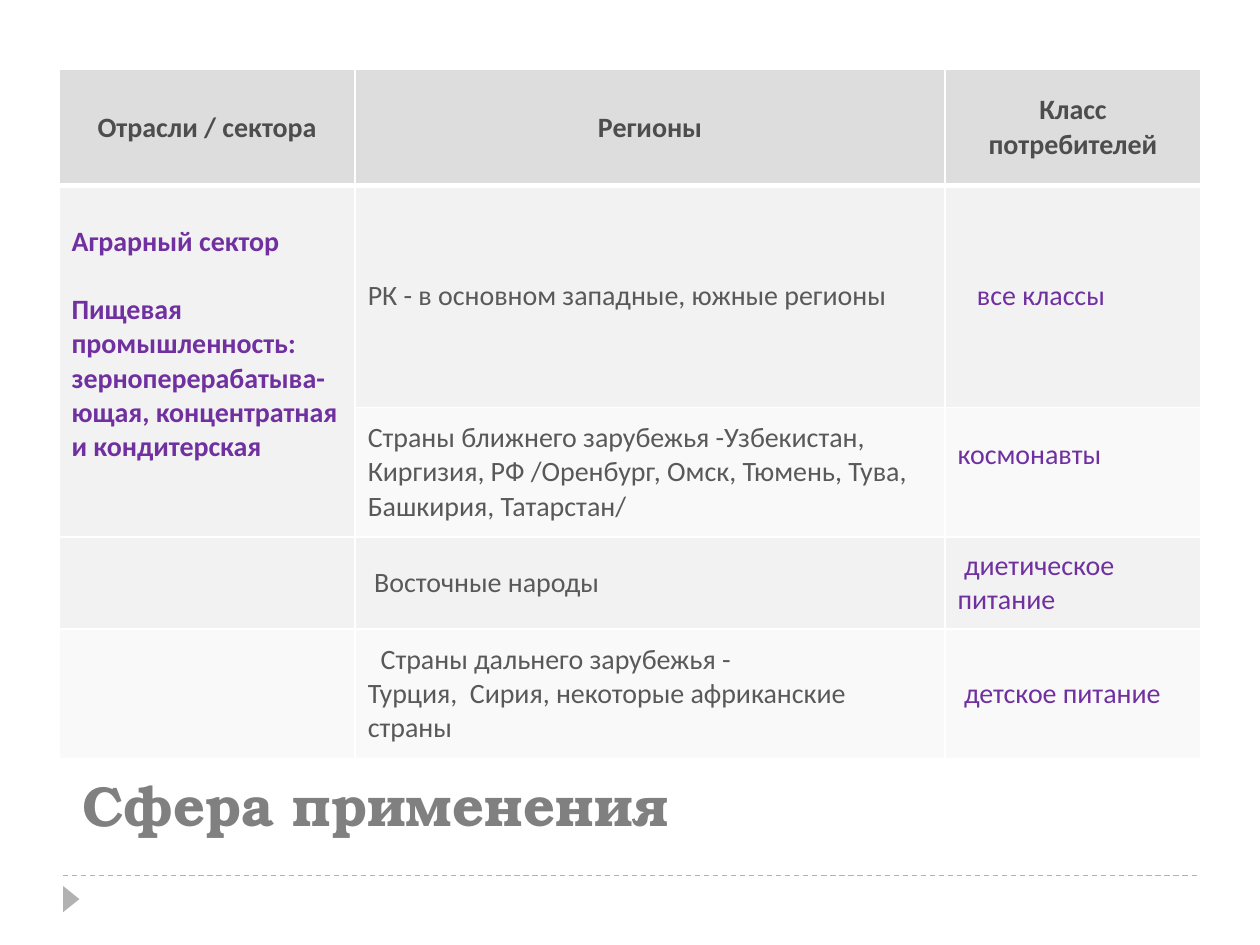
from pptx import Presentation
from pptx.dml.color import RGBColor
from pptx.enum import dml, shapes, text
from pptx.oxml import ns, xmlchemy
from pptx.util import Cm, Pt

COLORS = {
    "white": "FFFFFF", "rule": "B2B2B2", "title": "808080",
    "header": "DDDDDD", "header_text": "4D4D4D",
    "odd": "F2F2F2", "even": "F9F9F9",
    "body": "595959", "accent": "7030A0",
}
COLUMNS = (5.97, 11.89, 5.16)
ROWS = (2.34, 4.47, 2.62, 1.85, 2.62)
HEADERS = ("Отрасли / сектора", "Регионы", "Класс потребителей")
SECTORS = ("Аграрный сектор",
           "Пищевая промышленность: зерноперерабатыва-ющая, "
           "концентратная и кондитерская")
REGIONS = (
    ("РК - в основном западные, южные регионы",),
    ("Страны ближнего зарубежья -Узбекистан, Киргизия, РФ /Оренбург, "
     "Омск, Тюмень, Тува, Башкирия, Татарстан/",),
    ("Восточные народы",),
    ("Страны дальнего зарубежья -",
     "Турция,  Сирия, некоторые африканские страны"),
)
REGION_INDENTS = (0, 0, 0.13, 0.26)
CLASSES = (("все классы",), ("космонавты",),
           ("диетическое", "питание"), ("детское питание",))
CLASS_INDENTS = (0.39, 0, 0.13, 0.13)
RAISED_MARGIN = 0.81  # bottom margin that lifts centred text by half a line


def color(name):
    return RGBColor.from_string(COLORS[name])


def add_border(cell, side, width):
    """Add one white border; called before the cell is filled."""
    line = xmlchemy.OxmlElement(f"a:{side}")
    line.set("w", str(Pt(width)))
    fill = xmlchemy.OxmlElement("a:solidFill")
    value = xmlchemy.OxmlElement("a:srgbClr")
    value.set("val", COLORS["white"])
    fill.append(value)
    line.append(fill)
    cell._tc.get_or_add_tcPr().append(line)


def style_cell(cell, fill, bottom=1, top=1):
    for side, width in (("lnL", 1), ("lnR", 1), ("lnT", top), ("lnB", bottom)):
        add_border(cell, side, width)
    cell.fill.solid()
    cell.fill.fore_color.rgb = color(fill)
    cell.vertical_anchor = text.MSO_ANCHOR.MIDDLE


def write_cell(cell, lines, ink, bold=False, align=text.PP_ALIGN.LEFT, indent=0):
    frame = cell.text_frame
    frame.text = "\n".join(lines)
    for para in frame.paragraphs:
        para.alignment = align
        para.font.name = "Calibri"
        para.font.size = Pt(16)
        para.font.bold = bold
        para.font.color.rgb = color(ink)
    if indent:
        frame.paragraphs[0]._p.get_or_add_pPr().set("indent", str(Cm(indent)))


def add_market_table(page, left, top):
    frame = page.shapes.add_table(len(ROWS), len(COLUMNS), Cm(left), Cm(top),
                                  Cm(sum(COLUMNS)), Cm(sum(ROWS)))
    table = frame.table
    for column, width in zip(table.columns, COLUMNS):
        column.width = Cm(width)
    for row, height in zip(table.rows, ROWS):
        row.height = Cm(height)

    # Header row
    for index, heading in enumerate(HEADERS):
        cell = table.cell(0, index)
        style_cell(cell, "header", bottom=3)
        write_cell(cell, [heading], "header_text", True, text.PP_ALIGN.CENTER)

    # Banded body rows
    for row in range(1, len(ROWS)):
        for column in range(len(COLUMNS)):
            style_cell(table.cell(row, column), "odd" if row % 2 else "even",
                       top=3 if row == 1 else 1)
        write_cell(table.cell(row, 1), REGIONS[row - 1], "body",
                   indent=REGION_INDENTS[row - 1])
        write_cell(table.cell(row, 2), CLASSES[row - 1], "accent",
                   indent=CLASS_INDENTS[row - 1])

    # Sector cell across two rows
    sector = table.cell(1, 0)
    sector.merge(table.cell(2, 0))
    write_cell(sector, SECTORS, "accent", bold=True)
    sector.text_frame.paragraphs[1].space_before = Pt(19.5)
    for cell in (sector, table.cell(2, 2)):
        cell.margin_bottom = Cm(RAISED_MARGIN)


def place_title(page, left, top, width, height):
    title = page.shapes.title
    title.left, title.top = Cm(left), Cm(top)
    title.width, title.height = Cm(width), Cm(height)
    frame = title.text_frame
    frame.text = "Сфера применения"
    frame.vertical_anchor = text.MSO_ANCHOR.BOTTOM
    para = frame.paragraphs[0]
    para.alignment = text.PP_ALIGN.LEFT
    para.font.name = "TeX Gyre Bonum"
    para.font.size = Pt(32)
    para.font.bold = True
    para.font.color.rgb = color("title")


def add_footer(page, left, top, width):
    # Dashed rule
    rule = page.shapes.add_connector(shapes.MSO_CONNECTOR.STRAIGHT, Cm(left),
                                     Cm(top), Cm(left + width), Cm(top))
    rule.line.color.rgb = color("rule")
    rule.line.width = Pt(0.75)
    rule.line.dash_style = dml.MSO_LINE.DASH
    rule._element.find(ns.qn("p:spPr")).append(
        xmlchemy.OxmlElement("a:effectLst"))

    # Marker pointing right
    marker = page.shapes.add_shape(shapes.MSO_SHAPE.ISOSCELES_TRIANGLE,
                                   Cm(left - 0.1), Cm(top + 0.31),
                                   Cm(0.53), Cm(0.33))
    marker.rotation = 90
    marker.shadow.inherit = False
    marker.fill.solid()
    marker.fill.fore_color.rgb = color("rule")
    marker.line.fill.background()


def main():
    deck = Presentation()
    deck.slide_width, deck.slide_height = Cm(25.4), Cm(19.05)
    page = deck.slides.add_slide(deck.slide_layouts[5])
    add_footer(page, 1.27, 17.65, 22.86)
    place_title(page, 1.4, 14.68, 22.73, 2.34)
    add_market_table(page, 1.19, 1.4)
    deck.save("out.pptx")


if __name__ == "__main__":
    main()
